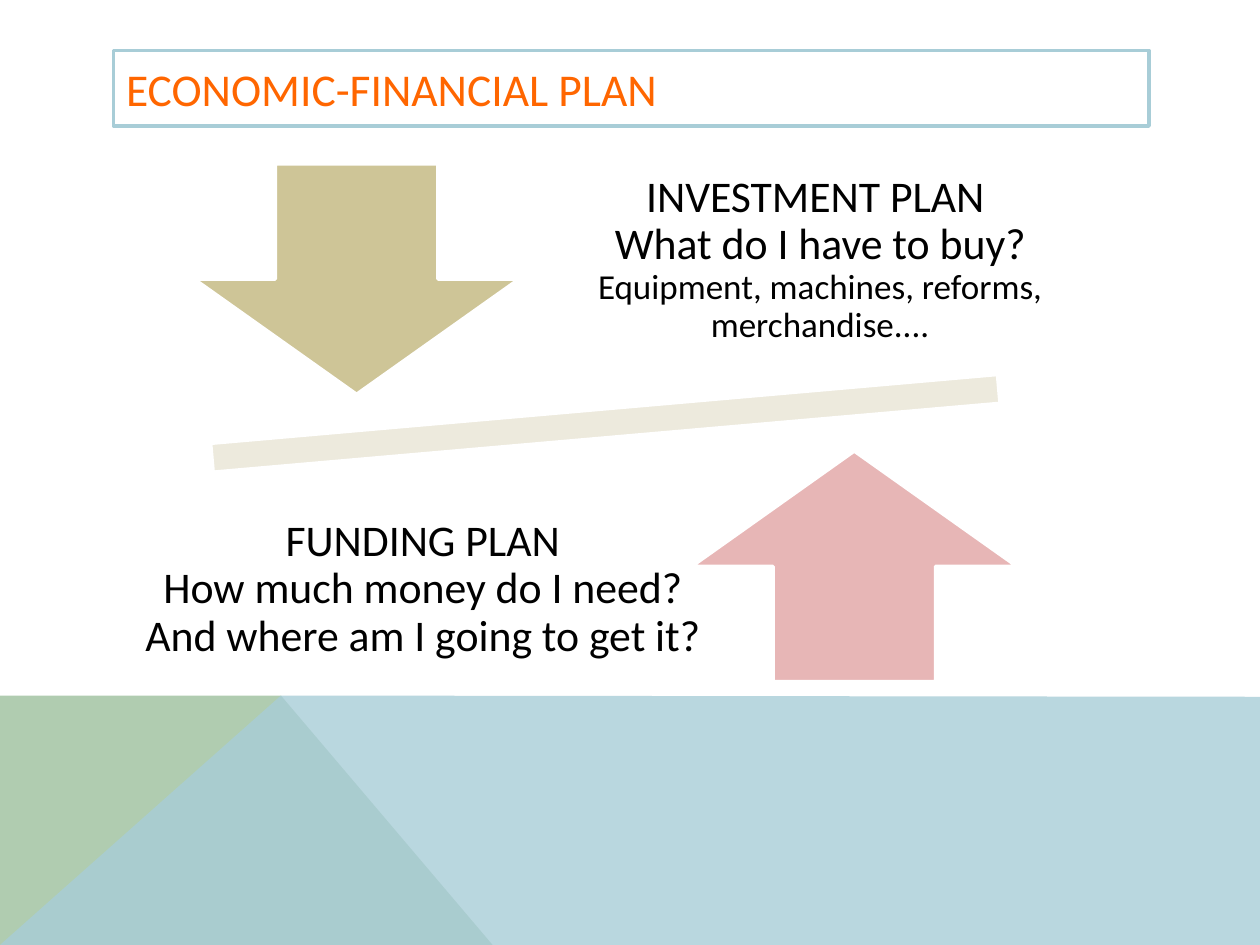
"""Build the economic-financial plan slide with its two balancing arrows."""
from lxml import etree
from pptx import Presentation
from pptx.dml.color import RGBColor
from pptx.enum.shapes import MSO_SHAPE as SHAPE
from pptx.enum.text import MSO_ANCHOR as ANCHOR, PP_ALIGN as ALIGN
from pptx.oxml.ns import qn
from pptx.util import Inches, Pt

COLORS = {
    "white": "FFFFFF", "black": "000000", "orange": "FF6600",
    "blue": "A8CDD7", "green": "B0CCB0", "bar": "EDEADD",
    "sand": "CEC597", "rose": "E7B6B6",
}


def paint(shape, fill, line=None):
    shape.fill.solid()
    shape.fill.fore_color.rgb = RGBColor.from_string(COLORS[fill])
    if line:
        shape.line.color.rgb = RGBColor.from_string(COLORS[line])
        shape.line.width = Pt(2)
    else:
        shape.line.fill.background()


def write_text(box, lines, color="black", align=ALIGN.CENTER, spacing=0.9, inset=(0.19, 0.19)):
    frame = box.text_frame
    frame.word_wrap = True
    frame.vertical_anchor = ANCHOR.MIDDLE
    frame.margin_left = frame.margin_right = Inches(inset[0])
    frame.margin_top = frame.margin_bottom = Inches(inset[1])
    para = frame.paragraphs[0]
    para.alignment = align
    para.line_spacing = spacing
    for index, (text, size) in enumerate(lines):
        if index:
            para.add_line_break()
        span = para.add_run()
        span.text = text
        span.font.name = "Calibri"
        span.font.size = Pt(size)
        span.font.color.rgb = RGBColor.from_string(COLORS[color])


deck = Presentation()
deck.slide_width, deck.slide_height = Inches(10), Inches(7.5)
page = deck.slides.add_slide(deck.slide_layouts[5])

bands = [
    ("green", [(0, 7.5), (0, 5.52), (2.23, 5.52), (3.91, 7.5)]),
    ("blue", [(0, 7.5), (2.23, 5.52), (10, 5.53), (10, 7.5)]),
]
for color, points in bands:
    corners = [(Inches(x), Inches(y)) for x, y in points]
    builder = page.shapes.build_freeform(*corners[0], scale=1.0)
    builder.add_line_segments(corners[1:], close=True)
    band = builder.convert_to_shape()
    band.shadow.inherit = False
    paint(band, color)
tint = band.fill._xPr.find(qn("a:solidFill"))[0]
etree.SubElement(tint, qn("a:alpha"), val="80000")

title = page.shapes.title
title.left, title.top, title.width, title.height = map(Inches, (0.9, 0.4, 8.22, 0.6))
paint(title, "white", "blue")
write_text(title, [("ECONOMIC-FINANCIAL PLAN", 26)], color="orange",
           align=ALIGN.LEFT, spacing=1.0, inset=(0.1, 0.05))

balance = [
    (SHAPE.MATH_MINUS, (0.54, 2.87, 8.53, 0.98), "bar", 355, [0.235]),
    (SHAPE.DOWN_ARROW, (1.54, 1.3, 2.58, 1.83), "sand", 0, [0.5, 0.5]),
    (SHAPE.UP_ARROW, (5.49, 3.58, 2.58, 1.83), "rose", 0, [0.5, 0.5]),
]
for kind, place, color, angle, adjustments in balance:
    shape = page.shapes.add_shape(kind, *map(Inches, place))
    shape.shadow.inherit = False
    shape.rotation = angle
    for index, value in enumerate(adjustments):
        shape.adjustments[index] = value
    paint(shape, color, "white")

plans = [
    ((0.9, 3.72, 4.91, 1.92), [
        ("FUNDING PLAN", 25),
        ("How much money do I need?", 25),
        ("And where am I going to get it?", 25),
    ]),
    ((4.01, 1.2, 5, 1.72), [
        ("INVESTMENT PLAN ", 25),
        ("What do I have to buy?", 25),
        ("Equipment, machines, reforms, merchandise....", 20),
    ]),
]
for place, lines in plans:
    write_text(page.shapes.add_textbox(*map(Inches, place)), lines)

deck.save("out.pptx")
